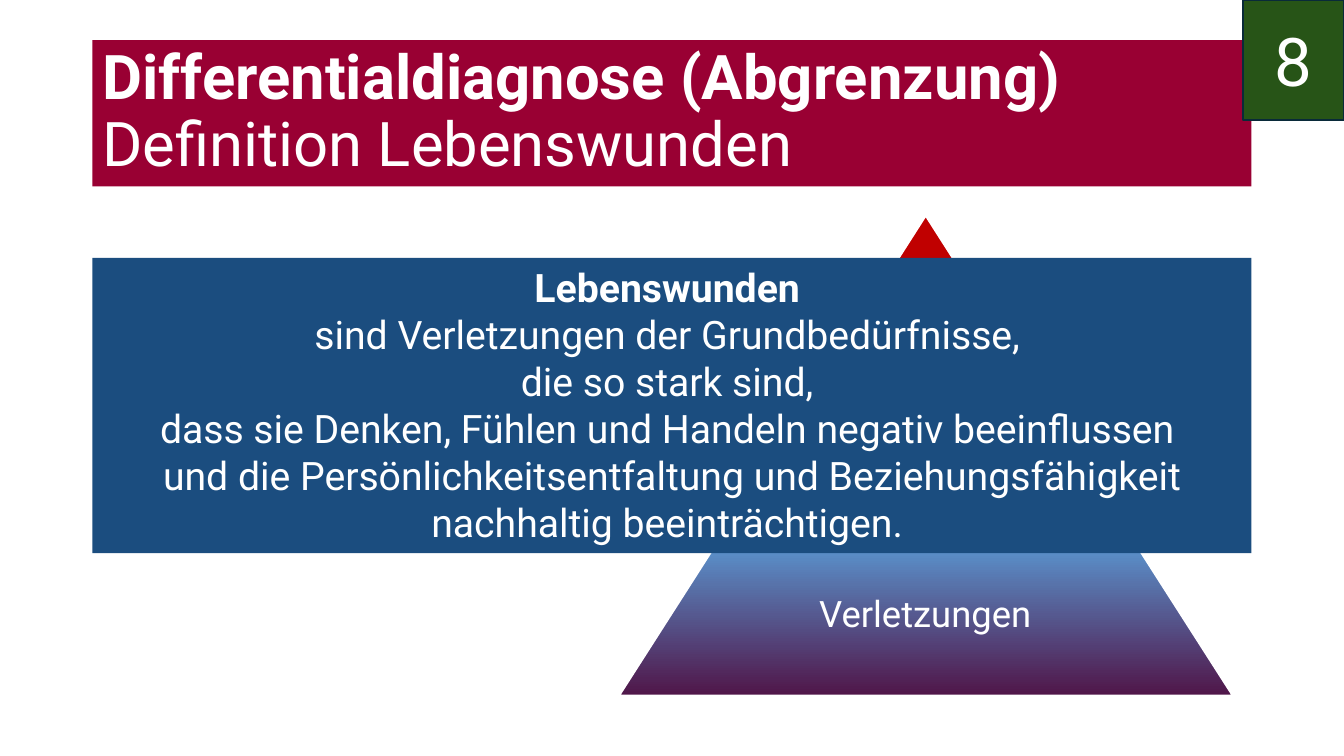
from dataclasses import dataclass

from pptx import Presentation, util as u
from pptx.dml.color import RGBColor
from pptx.enum import shapes, text

FONT = "Roboto"
WHITE = "FFFFFF"
MARGIN, BAND_W = 2.33, 29.21
LAYER_H = 4.04
BASE_TOP = 13.49


@dataclass
class Run:
    text: str
    bold: bool = False


@dataclass
class Layer:
    left: float
    top: float
    width: float
    stops: tuple[tuple[float, str], tuple[float, str]]


@dataclass
class Box:
    left: float
    top: float
    width: float
    height: float
    paragraphs: list[list[Run]]
    size: int
    fill: str | None = None
    line: str | None = None
    align: text.PP_ALIGN = text.PP_ALIGN.CENTER
    anchor: text.MSO_ANCHOR = text.MSO_ANCHOR.MIDDLE
    spacing: float = 1.0
    inset: float | None = None


LAYERS = [
    Layer(20.75, 5.43, 5.16, ((0, "F8CBAD"), (0.69, "C00000"))),
    Layer(15.6, BASE_TOP, 15.47, ((0, "501649"), (1, "5B9BD5"))),
]

BOXES = [
    Box(18.29, BASE_TOP, 10.06, LAYER_H, [[Run("Verletzungen")]], 26,
        spacing=0.9, inset=0.1),
    Box(MARGIN, 1.01, BAND_W, 3.69,
        [[Run("Differentialdiagnose (Abgrenzung) ", True),
          Run("Definition Lebenswunden")]],
        44, "990033", align=text.PP_ALIGN.LEFT, spacing=0.9),
    Box(MARGIN, 6.5, BAND_W, 7.44,
        [[Run("Lebenswunden ", True), Run("\n"),
          Run("sind Verletzungen der Grundbedürfnisse, ")],
         [Run("die so stark sind, ")],
         [Run("dass sie Denken, Fühlen und Handeln negativ beeinflussen ")],
         [Run("und die Persönlichkeitsentfaltung und Beziehungsfähigkeit "
              "nachhaltig beeinträchtigen. ")]],
        28, "1B4D7F", anchor=text.MSO_ANCHOR.TOP),
    Box(31.33, 0, 2.54, 3.03, [[Run("8")]], 48, "275417", "092A39"),
]


def rgb(value: str) -> RGBColor:
    return RGBColor.from_string(value)


def set_line(sp, color: str | None) -> None:
    if color is None:
        sp.line.fill.background()
    else:
        sp.line.color.rgb = rgb(color)
        sp.line.width = u.Pt(1.5)


def add_layer(s, layer: Layer) -> None:
    """Draw one pyramid layer with a gradient running upwards."""
    sp = s.shapes.add_shape(
        shapes.MSO_SHAPE.TRAPEZOID, u.Cm(layer.left), u.Cm(layer.top),
        u.Cm(layer.width), u.Cm(LAYER_H))
    sp.shadow.inherit = False
    sp.adjustments[0] = 0.64
    sp.fill.gradient()
    sp.fill.gradient_angle = 90
    for stop, (position, color) in zip(sp.fill.gradient_stops, layer.stops):
        stop.position = position
        stop.color.rgb = rgb(color)
    set_line(sp, WHITE)


def fill_text(tf, box: Box) -> None:
    tf.word_wrap = True
    tf.vertical_anchor = box.anchor
    if box.inset is not None:
        tf.margin_left = tf.margin_right = u.Cm(box.inset)
        tf.margin_top = tf.margin_bottom = u.Cm(box.inset)
    for i, runs in enumerate(box.paragraphs):
        p = tf.add_paragraph() if i else tf.paragraphs[0]
        p.alignment = box.align
        p.line_spacing = box.spacing
        p.font.name = FONT
        p.font.size = u.Pt(box.size)
        p.font.color.rgb = rgb(WHITE)
        for run in runs:
            if run.text == "\n":
                p.add_line_break()
                continue
            r = p.add_run()
            r.text = run.text
            r.font.bold = run.bold


def add_box(s, box: Box) -> None:
    """Draw a filled rectangle, or a plain text box if there is no fill."""
    place = [u.Cm(v) for v in (box.left, box.top, box.width, box.height)]
    if box.fill is None:
        sp = s.shapes.add_textbox(*place)
    else:
        sp = s.shapes.add_shape(shapes.MSO_SHAPE.RECTANGLE, *place)
        sp.shadow.inherit = False
        sp.fill.solid()
        sp.fill.fore_color.rgb = rgb(box.fill)
        set_line(sp, box.line)
    fill_text(sp.text_frame, box)


def main() -> None:
    prs = Presentation()
    prs.slide_width, prs.slide_height = u.Cm(33.87), u.Cm(19.05)
    s = prs.slides.add_slide(prs.slide_layouts[6])
    for layer in LAYERS:
        add_layer(s, layer)
    for box in BOXES:
        add_box(s, box)
    prs.save("out.pptx")


if __name__ == "__main__":
    main()
